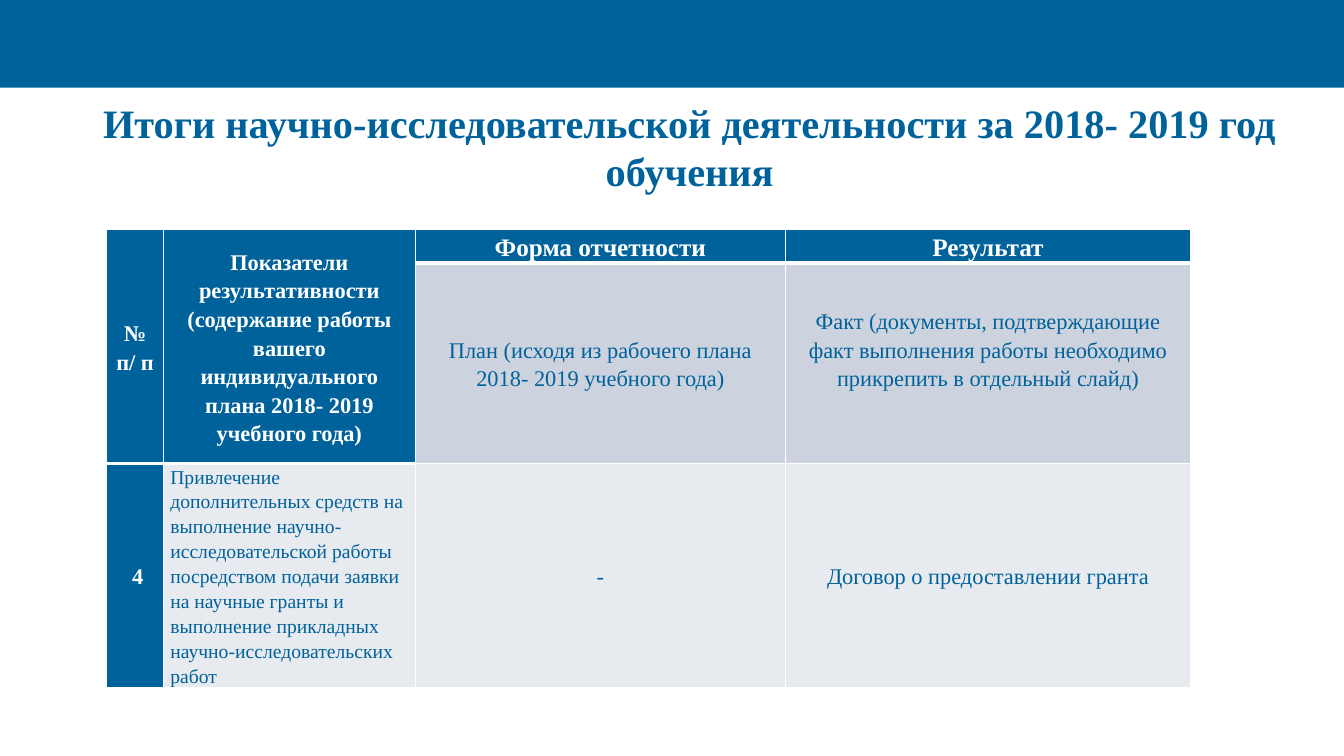
import pptx
import pptx.dml.color
import pptx.enum.shapes
import pptx.enum.text
import pptx.oxml
import pptx.oxml.ns
import pptx.util

Inches, Pt = pptx.util.Inches, pptx.util.Pt
RGBColor = pptx.dml.color.RGBColor
Align, Anchor = pptx.enum.text.PP_ALIGN, pptx.enum.text.MSO_ANCHOR

BLUE = RGBColor(0x00, 0x62, 0x9B)
WHITE = RGBColor(0xFF, 0xFF, 0xFF)
GREY = RGBColor(0xCC, 0xD3, 0xDE)
PALE = RGBColor(0xE7, 0xEA, 0xEF)
FONT = "Times New Roman"


def write(box, lines, size, color, bold, align=Align.CENTER, spacing=1.0):
    for index, line in enumerate(lines):
        para = box.paragraphs[0] if index == 0 else box.add_paragraph()
        para.alignment = align
        para.line_spacing = spacing
        span = para.add_run()
        span.text = line
        look = {"name": FONT, "size": Pt(size), "bold": bold}
        for name, value in look.items():
            setattr(span.font, name, value)
        span.font.color.rgb = color


def add_borders(cell, widths):
    for side, width in zip("LRTB", widths):
        cell._tc.get_or_add_tcPr().append(pptx.oxml.parse_xml(
            f'<a:ln{side} {pptx.oxml.ns.nsdecls("a")} w="{Pt(width)}">'
            f'<a:solidFill><a:srgbClr val="{WHITE}"/></a:solidFill></a:ln{side}>'))


deck = pptx.Presentation()
deck.slide_width, deck.slide_height = Inches(13.33), Inches(7.5)
page = deck.slides.add_slide(deck.slide_layouts[5])

# Top band
band = page.shapes.add_shape(pptx.enum.shapes.MSO_SHAPE.RECTANGLE,
                             0, 0, deck.slide_width, Inches(0.87))
band.shadow.inherit = False
band.fill.solid()
band.fill.fore_color.rgb = BLUE
band.line.fill.background()

# Title
title = page.shapes.title
place = {"left": 0.84, "top": 1, "width": 12, "height": 0.9}
for name, value in place.items():
    setattr(title, name, Inches(value))
title.text_frame.auto_size = pptx.enum.text.MSO_AUTO_SIZE.NONE
title.text_frame.word_wrap = True
title.text_frame.vertical_anchor = Anchor.MIDDLE
write(title.text_frame,
      ["Итоги научно-исследовательской деятельности за 2018- 2019 год обучения"],
      28.8, BLUE, True)

# Results table
columns = [0.56, 2.5, 3.67, 4.02]
rows = [0.33, 1.98, 2.22]
results = page.shapes.add_table(len(rows), len(columns), Inches(1.06), Inches(2.28),
                                Inches(sum(columns)), Inches(sum(rows))).table
results.first_row = results.horz_banding = False
for column, width in zip(results.columns, columns):
    column.width = Inches(width)
for row, height in zip(results.rows, rows):
    row.height = Inches(height)

# Fills, margins and borders: a thick rule runs under the headings
fills = [[BLUE] * 4, [BLUE, BLUE, GREY, GREY], [BLUE, PALE, PALE, PALE]]
for r, row_fills in enumerate(fills):
    for c, fill in enumerate(row_fills):
        cell = results.cell(r, c)
        heading_end = 1 if c < 2 else 0
        add_borders(cell, [1, 1, 3 if r == heading_end + 1 else 1,
                           3 if r == heading_end else 1])
        cell.fill.solid()
        cell.fill.fore_color.rgb = fill
        cell.margin_left = cell.margin_right = Inches(0.07)
        cell.margin_top = cell.margin_bottom = 0
        cell.vertical_anchor = Anchor.MIDDLE
for c in range(2):
    results.cell(0, c).merge(results.cell(1, c))

# Cell texts: row, column, paragraphs, size, colour, bold, alignment
texts = [
    (0, 0, ["№ п/ п"], 16, WHITE, True, Align.CENTER),
    (0, 1, ["Показатели результативности",
            "(содержание работы вашего индивидуального плана 2018- 2019 учебного года)"],
     16, WHITE, True, Align.CENTER),
    (0, 2, ["Форма отчетности"], 18, WHITE, True, Align.CENTER),
    (0, 3, ["Результат"], 18, WHITE, True, Align.CENTER),
    (1, 2, ["План (исходя из рабочего плана 2018- 2019 учебного года)"],
     16, BLUE, False, Align.CENTER),
    (1, 3, ["Факт (документы, подтверждающие факт выполнения работы "
            "необходимо прикрепить в отдельный слайд)"], 16, BLUE, False, Align.CENTER),
    (2, 0, ["4"], 16, WHITE, True, Align.CENTER),
    (2, 1, ["Привлечение дополнительных средств на выполнение научно-исследовательской "
            "работы посредством подачи заявки на научные гранты и выполнение прикладных "
            "научно-исследовательских работ"], 14, BLUE, False, Align.LEFT),
    (2, 2, ["-"], 16, BLUE, False, Align.CENTER),
    (2, 3, ["Договор о предоставлении гранта"], 16, BLUE, False, Align.CENTER),
]
for r, c, lines, size, color, bold, align in texts:
    write(results.cell(r, c).text_frame, lines, size, color, bold, align, 1.15)

# Cells set off from the centre or aligned to the top
results.cell(1, 3).margin_bottom = Inches(0.29)
results.cell(2, 0).margin_left = Inches(0.12)
for r, c in [(0, 2), (0, 3), (2, 1)]:
    results.cell(r, c).vertical_anchor = Anchor.TOP

deck.save("out.pptx")
